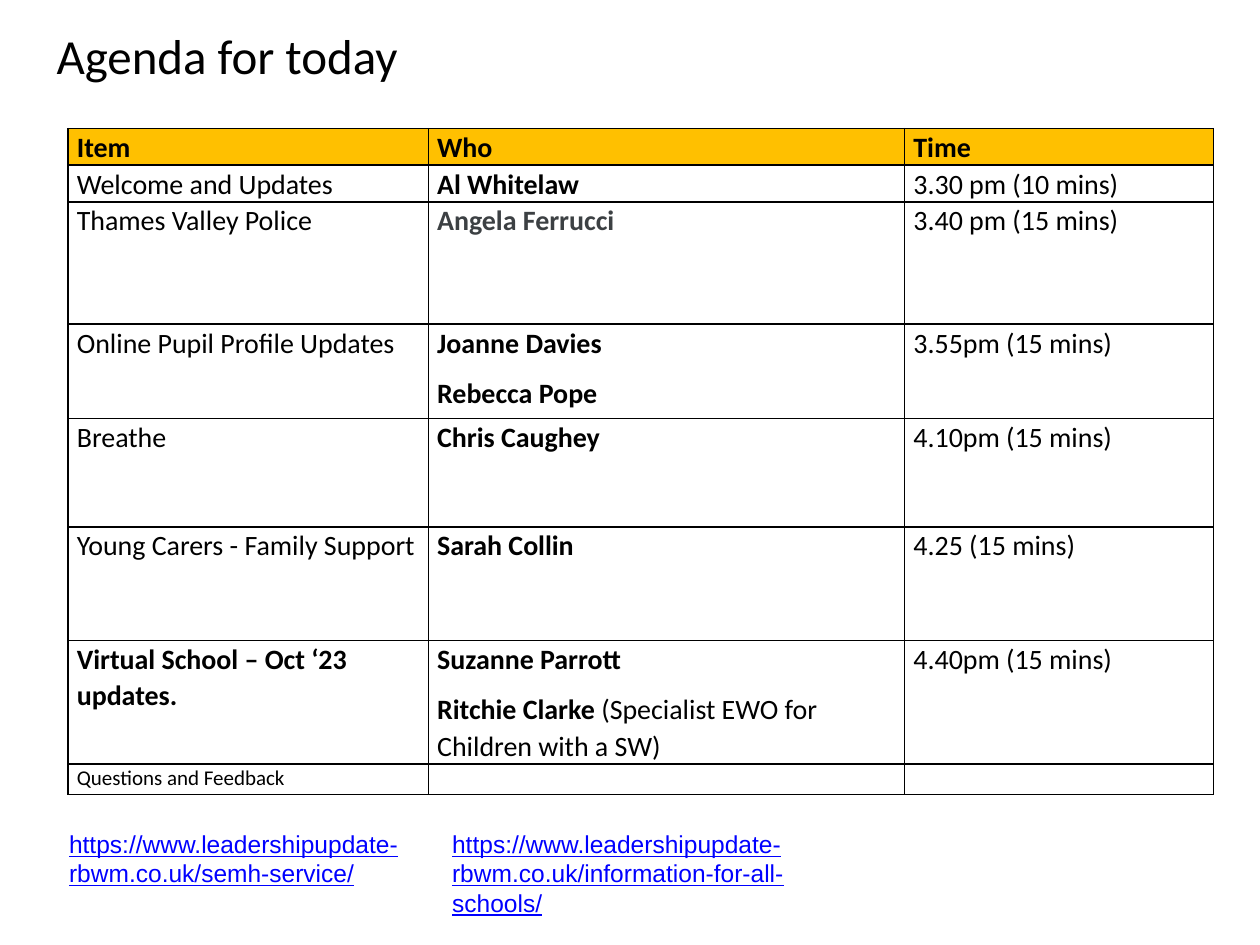
import pptx
import pptx.dml.color
import pptx.enum.text
import pptx.oxml.ns
import pptx.util
from lxml import etree

Inches, Pt = pptx.util.Inches, pptx.util.Pt
qn = pptx.oxml.ns.qn

# Run formats
PLAIN = {"name": "Calibri", "size": Pt(16), "bold": False, "color": "000000"}
BOLD = {**PLAIN, "bold": True}
GREY = {**BOLD, "color": "3C4043"}
SMALL = {**PLAIN, "size": Pt(12)}
TITLE = {**PLAIN, "size": Pt(28)}
LINK = {"name": "Arial", "size": Pt(14), "underline": True, "color": "0000FF"}

# Agenda: row height, then one cell per column; a cell is a list of paragraphs,
# a paragraph is a list of (text, format) runs
COLUMNS = [2.86, 3.78, 2.45]
AGENDA = [
    (0.29, [[[("Item", BOLD)]], [[("Who", BOLD)]], [[("Time", BOLD)]]]),
    (0.29, [[[("Welcome and Updates", PLAIN)]], [[("Al Whitelaw", BOLD)]],
            [[("3.30 pm (10 mins)", PLAIN)]]]),
    (0.97, [[[("Thames Valley Police", PLAIN)]], [[("Angela Ferrucci", GREY)]],
            [[("3.40 pm (15 mins)", PLAIN)]]]),
    (0.75, [[[("Online Pupil Profile Updates", PLAIN)]],
            [[("Joanne Davies", BOLD)], [("Rebecca Pope", BOLD)]],
            [[("3.55pm (15 mins)", PLAIN)]]]),
    (0.86, [[[("Breathe", PLAIN)]], [[("Chris Caughey", BOLD)]],
            [[("4.10pm (15 mins)", PLAIN)]]]),
    (0.9, [[[("Young Carers - Family Support", PLAIN)]], [[("Sarah Collin", BOLD)]],
           [[("4.25 (15 mins)", PLAIN)]]]),
    (0.98, [[[("Virtual School – Oct ‘23 updates.", BOLD)]],
            [[("Suzanne Parrott", BOLD)],
             [("Ritchie Clarke", BOLD), (" (Specialist EWO for Children with a SW)", PLAIN)]],
            [[("4.40pm (15 mins)", PLAIN)]]]),
    (0.24, [[[("Questions and Feedback", SMALL)]], [[]], [[]]]),
]

# Text boxes: left, top, width, height, anchor, text, format
TEXTS = [
    (0.35, -0.15, 6.91, 1.17, "MIDDLE", "Agenda for today", TITLE),
    (0.45, 6.53, 3.1, 0.57, "TOP",
     "https://www.leadershipupdate-rbwm.co.uk/semh-service/", LINK),
    (3.49, 6.53, 3.1, 0.81, "TOP",
     "https://www.leadershipupdate-rbwm.co.uk/information-for-all-schools/", LINK),
]


def rgb(value):
    return pptx.dml.color.RGBColor.from_string(value)


def add_run(p, text, style):
    r = p.add_run()
    r.text = text
    for key, value in style.items():
        if key == "color":
            r.font.color.rgb = rgb(value)
        else:
            setattr(r.font, key, value)


def add_borders(cell):
    tcPr = cell._tc.get_or_add_tcPr()
    for side in ("lnL", "lnR", "lnT", "lnB"):
        ln = etree.SubElement(tcPr, qn("a:" + side), w=str(Pt(1)))
        fill = etree.SubElement(ln, qn("a:solidFill"))
        etree.SubElement(fill, qn("a:srgbClr"), val="000000")


def fill_cell(cell, paragraphs):
    cell.margin_left = cell.margin_right = Inches(0.07)
    cell.margin_top = cell.margin_bottom = 0
    tf = cell.text_frame
    for i, runs in enumerate(paragraphs):
        p = tf.add_paragraph() if i else tf.paragraphs[0]
        p.line_spacing, p.space_after = 1.07, Pt(8)
        for text, style in runs:
            add_run(p, text, style)
        if not runs:  # keeps an empty cell as low as its row
            etree.SubElement(p._p, qn("a:endParaRPr"), sz="1200")


prs = pptx.Presentation()
prs.slide_width, prs.slide_height = Inches(10), Inches(7.5)
s = prs.slides.add_slide(prs.slide_layouts[6])

# Agenda table
heights = [height for height, _ in AGENDA]
table = s.shapes.add_table(len(AGENDA), len(COLUMNS), Inches(0.54), Inches(1.02),
                           Inches(sum(COLUMNS)), Inches(sum(heights))).table
table.first_row = table.horz_banding = False
for column, width in zip(table.columns, COLUMNS):
    column.width = Inches(width)
for i, (height, cells) in enumerate(AGENDA):
    table.rows[i].height = Inches(height)
    for j, paragraphs in enumerate(cells):
        cell = table.cell(i, j)
        fill_cell(cell, paragraphs)
        add_borders(cell)
        if i == 0:
            cell.fill.solid()
            cell.fill.fore_color.rgb = rgb("FFC000")
        else:
            cell.fill.background()

# Title and links
for left, top, width, height, anchor, text, style in TEXTS:
    sp = s.shapes.add_textbox(Inches(left), Inches(top), Inches(width), Inches(height))
    tf = sp.text_frame
    tf.word_wrap = True
    tf.vertical_anchor = pptx.enum.text.MSO_ANCHOR[anchor]
    add_run(tf.paragraphs[0], text, style)

prs.save("out.pptx")
